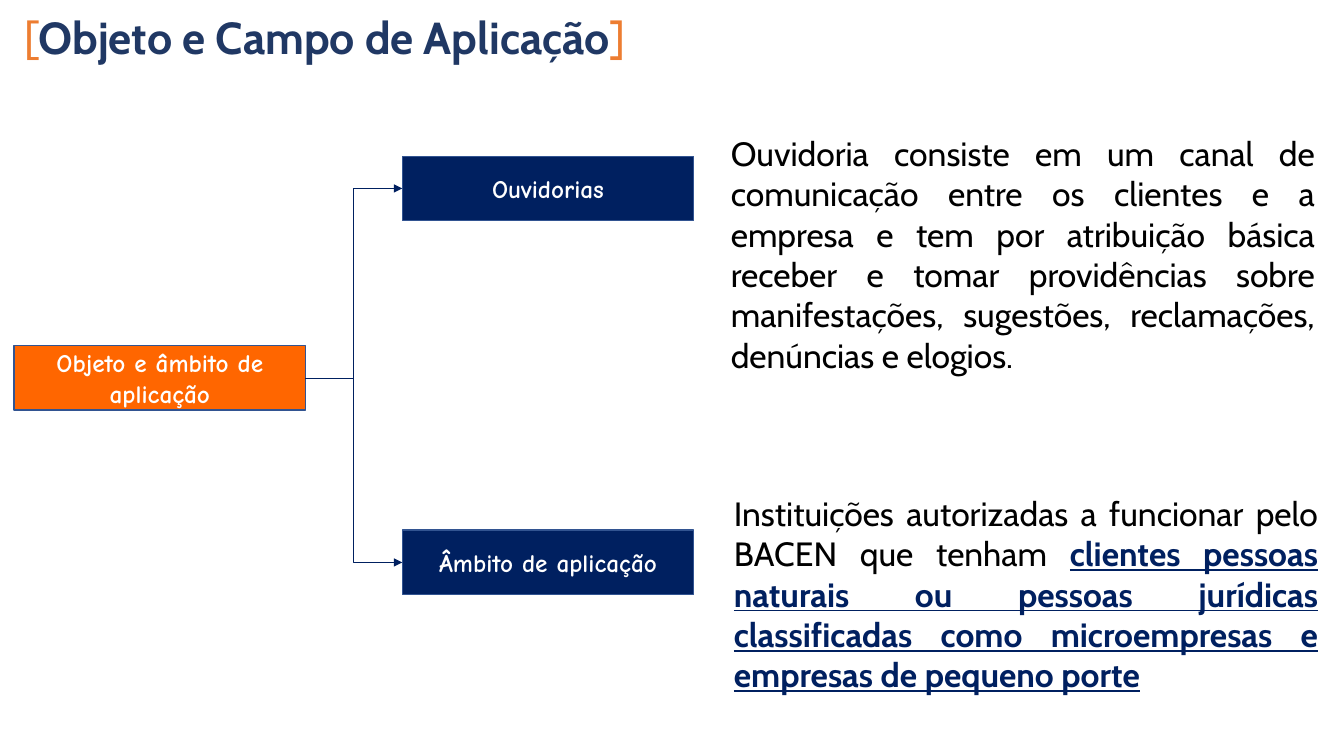
from dataclasses import dataclass

from lxml.etree import SubElement
from pptx import Presentation
from pptx.dml.color import RGBColor
from pptx.enum.shapes import MSO_CONNECTOR, MSO_SHAPE
from pptx.enum.text import MSO_ANCHOR, MSO_AUTO_SIZE, PP_ALIGN
from pptx.oxml.ns import qn
from pptx.shapes.autoshape import Shape
from pptx.slide import Slide
from pptx.util import Inches, Pt

ORANGE = RGBColor(0xFF, 0x66, 0x00)
BRACKET = RGBColor(0xED, 0x7D, 0x31)
TITLE_BLUE = RGBColor(0x20, 0x38, 0x64)
NAVY = RGBColor(0x00, 0x20, 0x60)
BORDER = RGBColor(0x32, 0x54, 0x91)
WHITE = RGBColor(0xFF, 0xFF, 0xFF)
BLACK = RGBColor(0x00, 0x00, 0x00)

BOX_WIDTH, BOX_HEIGHT = 2.89, 0.64
RIGHT_SIDE, LEFT_SIDE = 3, 1


@dataclass
class Box:
    text: str
    left: float
    top: float
    fill: RGBColor


@dataclass
class Run:
    text: str
    color: RGBColor
    bold: bool = False
    underline: bool = False


@dataclass
class TextBlock:
    left: float
    top: float
    width: float
    height: float
    size: int
    align: PP_ALIGN
    runs: list[Run]


ROOT = Box("Objeto e âmbito de aplicação", 0.14, 3.43, ORANGE)
BRANCHES = [
    Box("Ouvidorias", 3.99, 1.55, NAVY),
    Box("Âmbito de aplicação", 3.99, 5.26, NAVY),
]
TEXT_BLOCKS = [
    TextBlock(0.14, 0.05, 9.46, 0.64, 32, PP_ALIGN.LEFT, [
        Run("[", BRACKET),
        Run("Objeto e Campo de Aplicação", TITLE_BLUE, bold=True),
        Run("]", BRACKET),
    ]),
    TextBlock(7.15, 1.27, 5.99, 2.52, 24, PP_ALIGN.JUSTIFY, [
        Run("Ouvidoria consiste em um canal de comunicação entre os clientes e a "
            "empresa e tem por atribuição básica receber e tomar providências sobre "
            "manifestações, sugestões, reclamações, denúncias e elogios.", BLACK),
    ]),
    TextBlock(7.18, 4.84, 5.99, 2.12, 24, PP_ALIGN.JUSTIFY, [
        Run("Instituições autorizadas a funcionar pelo BACEN que tenham ", BLACK),
        Run("clientes pessoas naturais ou pessoas jurídicas classificadas como "
            "microempresas e empresas de pequeno porte", NAVY, bold=True, underline=True),
    ]),
]


def add_box(s: Slide, box: Box) -> Shape:
    sp = s.shapes.add_shape(MSO_SHAPE.RECTANGLE, Inches(box.left), Inches(box.top),
                            Inches(BOX_WIDTH), Inches(BOX_HEIGHT))
    sp.shadow.inherit = False
    sp.fill.solid()
    sp.fill.fore_color.rgb = box.fill
    sp.line.color.rgb = BORDER
    sp.line.width = Pt(1)
    tf = sp.text_frame
    tf.text = box.text
    tf.word_wrap = True
    tf.vertical_anchor = MSO_ANCHOR.MIDDLE
    p = tf.paragraphs[0]
    p.alignment = PP_ALIGN.CENTER
    font = p.runs[0].font
    font.name = "Comic Neue"
    font.size = Pt(18)
    font.bold = True
    font.color.rgb = WHITE
    return sp


def add_text(s: Slide, block: TextBlock) -> None:
    sp = s.shapes.add_textbox(Inches(block.left), Inches(block.top),
                              Inches(block.width), Inches(block.height))
    tf = sp.text_frame
    tf.word_wrap = True
    tf.auto_size = MSO_AUTO_SIZE.SHAPE_TO_FIT_TEXT
    p = tf.paragraphs[0]
    p.alignment = block.align
    for run in block.runs:
        r = p.add_run()
        r.text = run.text
        r.font.name = "Cabin"
        r.font.size = Pt(block.size)
        r.font.bold = run.bold
        r.font.underline = run.underline
        r.font.color.rgb = run.color


def add_arrow(s: Slide, start: Shape, end: Shape) -> None:
    cxn = s.shapes.add_connector(MSO_CONNECTOR.ELBOW, 0, 0, 0, 0)
    cxn.begin_connect(start, RIGHT_SIDE)
    cxn.end_connect(end, LEFT_SIDE)
    cxn.line.color.rgb = NAVY
    cxn.line.width = Pt(0.5)
    sp_pr = cxn.element.spPr
    SubElement(sp_pr.find(qn("a:ln")), qn("a:tailEnd"), type="triangle")
    SubElement(sp_pr, qn("a:effectLst"))


def main() -> None:
    prs = Presentation()
    prs.slide_width = Inches(13.33)
    prs.slide_height = Inches(7.5)
    s = prs.slides.add_slide(prs.slide_layouts[6])
    for block in TEXT_BLOCKS:
        add_text(s, block)
    root = add_box(s, ROOT)
    for branch in BRANCHES:
        add_arrow(s, root, add_box(s, branch))
    prs.save("out.pptx")


if __name__ == "__main__":
    main()
